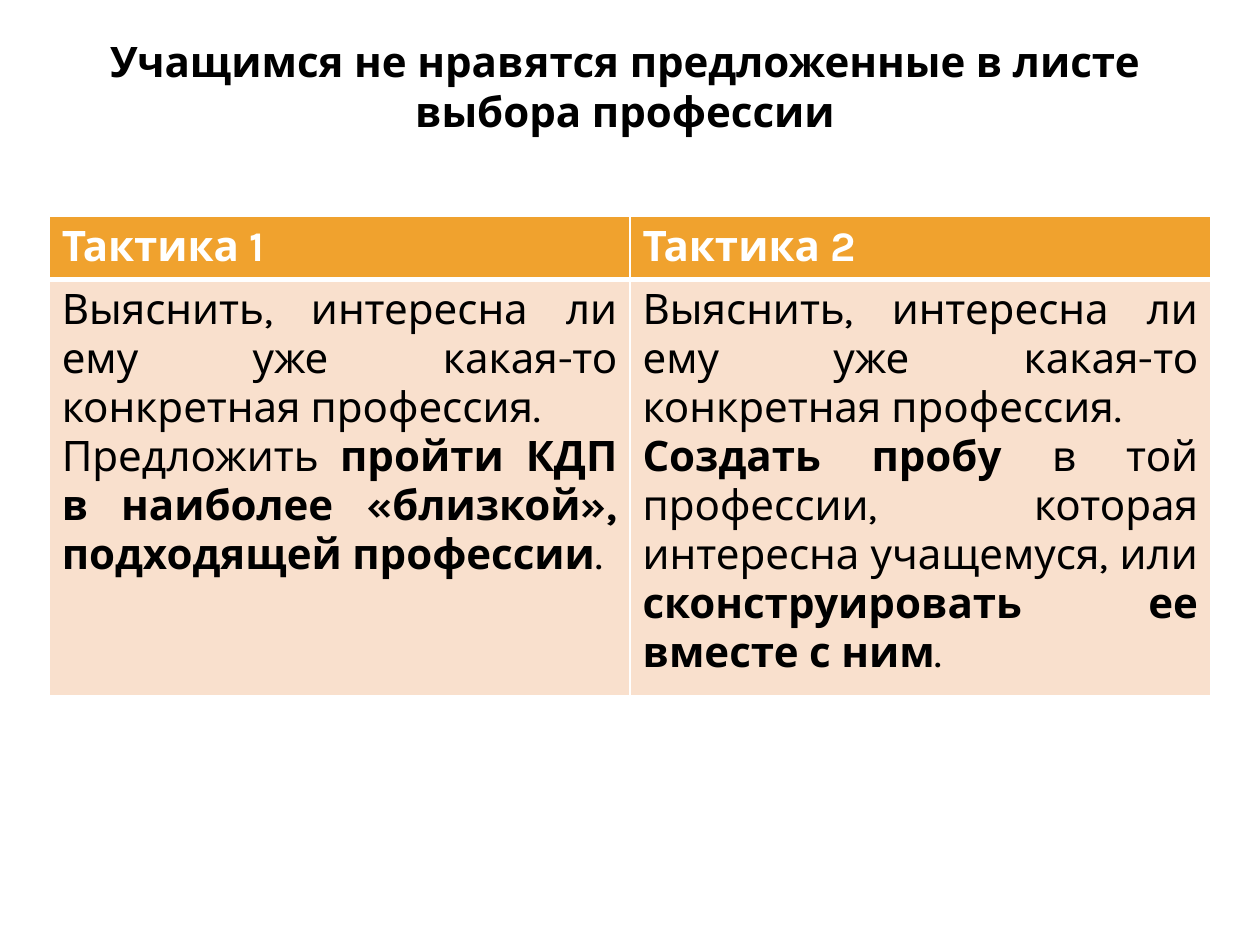
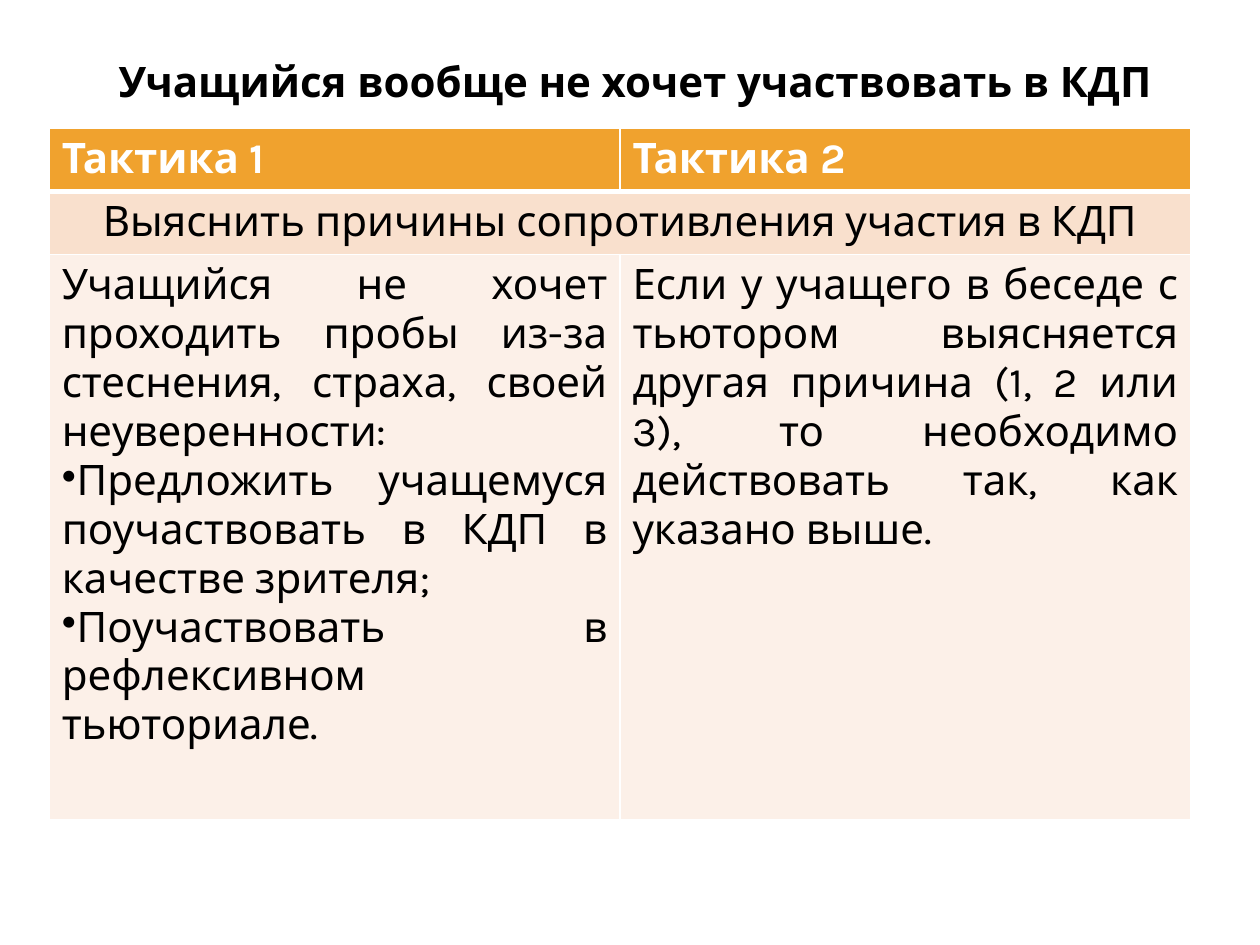
"""Build two slides that compare tutor tactics in tables."""
from dataclasses import dataclass

from lxml import etree
from pptx import Presentation
from pptx.dml.color import RGBColor
from pptx.enum import text
from pptx.oxml import ns
from pptx.util import Inches, Pt

ALIGN = text.PP_ALIGN
TITLE_ONLY = 5


@dataclass(frozen=True)
class Theme:
    font: str = "Karla"
    size: int = 24
    ink: str = "000000"
    white: str = "FFFFFF"
    header: str = "F0A22E"
    bands: tuple = ("F9E0CD", "FCF0E8")
    thin: int = 1
    thick: int = 3


class Deck:
    def __init__(self, theme):
        self.theme = theme
        self.prs = Presentation()
        self.prs.slide_width, self.prs.slide_height = Inches(10), Inches(7.5)
        self.slide = None

    def add_slide(self):
        layout = self.prs.slide_layouts[TITLE_ONLY]
        self.slide = self.prs.slides.add_slide(layout)

    def style(self, paragraph, color, bold, align):
        font = paragraph.font
        font.name, font.size = self.theme.font, Pt(self.theme.size)
        font.color.rgb = RGBColor.from_string(color)
        font.bold = bold
        paragraph.alignment = align

    def title(self, wording, left, top, width, height):
        heading = self.slide.shapes.title
        heading.left, heading.top = Inches(left), Inches(top)
        heading.width, heading.height = Inches(width), Inches(height)
        frame = heading.text_frame
        frame.text = wording
        frame.word_wrap = True
        frame.auto_size = text.MSO_AUTO_SIZE.NONE
        frame.vertical_anchor = text.MSO_ANCHOR.TOP
        self.style(frame.paragraphs[0], self.theme.ink, True, ALIGN.CENTER)

    def bullet(self, paragraph):
        props = paragraph._p.get_or_add_pPr()
        props.set("marL", "0")
        props.set("indent", "0")
        etree.SubElement(props, ns.qn("a:buChar")).set("char", "•")

    def borders(self, cell, top, bottom):
        props = cell._tc.get_or_add_tcPr()
        thin = self.theme.thin
        widths = {"L": thin, "R": thin, "T": top, "B": bottom}
        for place, (side, width) in enumerate(widths.items()):
            line = etree.Element(ns.qn(f"a:ln{side}"), w=str(Pt(width)))
            fill = etree.SubElement(line, ns.qn("a:solidFill"))
            etree.SubElement(fill, ns.qn("a:srgbClr"), val=self.theme.white)
            props.insert(place, line)

    def cell(self, cell, lines, fill, color, bold, align):
        """Fill a cell; ** toggles bold and a leading • makes a bullet."""
        cell.fill.solid()
        cell.fill.fore_color.rgb = RGBColor.from_string(fill)
        frame = cell.text_frame
        for number, line in enumerate(lines):
            paragraph = frame.add_paragraph() if number else frame.paragraphs[0]
            self.style(paragraph, color, bold, align)
            if line.startswith("•"):
                self.bullet(paragraph)
            for part, words in enumerate(line.lstrip("•").split("**")):
                if words:
                    run = paragraph.add_run()
                    run.text = words
                    if part % 2:
                        run.font.bold = True

    def tactics(self, left, top, width, heights, rows):
        """Draw a two-column table; a row with one entry spans both columns."""
        theme = self.theme
        table = self.slide.shapes.add_table(
            len(heights), 2, Inches(left), Inches(top),
            Inches(width), Inches(sum(heights))).table
        headings = [["Тактика 1"], ["Тактика 2"]]
        for number, (height, entries) in enumerate(zip(heights, [headings] + rows)):
            table.rows[number].height = Inches(height)
            spans = len(entries) == 1
            if spans:
                table.cell(number, 0).merge(table.cell(number, 1))
            for column, lines in enumerate(entries):
                cell = table.cell(number, column)
                if number == 0:
                    self.cell(cell, lines, theme.header, theme.white, True, ALIGN.LEFT)
                else:
                    self.cell(cell, lines, theme.bands[number - 1], theme.ink, False,
                              ALIGN.CENTER if spans else ALIGN.JUSTIFY)
            for column in range(2):
                self.borders(table.cell(number, column),
                             theme.thick if number == 1 else theme.thin,
                             theme.thick if number == 0 else theme.thin)


def main():
    deck = Deck(Theme())

    deck.add_slide()
    deck.title("Учащимся не нравятся предложенные в листе выбора профессии",
               0.39, 0.23, 9.14, 1.31)
    interest = "Выяснить, интересна ли ему уже какая-то конкретная профессия."
    deck.tactics(0.39, 1.72, 9.22, [0.5, 3.3], [[
        [interest,
         "Предложить **пройти КДП в наиболее «близкой», подходящей профессии**."],
        [interest,
         "**Создать пробу **в той профессии, которая интересна учащемуся, или "
         "**сконструировать ее вместе с ним**."],
    ]])

    deck.add_slide()
    deck.title("Учащийся вообще не хочет участвовать в КДП", 0.55, 0.39, 8.98, 0.91)
    deck.tactics(0.39, 1.02, 9.06, [0.5, 0.5, 4.49], [
        [["Выяснить причины сопротивления участия в КДП"]],
        [["Учащийся не хочет проходить пробы из-за стеснения, страха, "
          "своей неуверенности:",
          "•Предложить учащемуся поучаствовать в КДП в качестве зрителя;",
          "•Поучаствовать в рефлексивном тьюториале."],
         ["Если у учащего в беседе с тьютором выясняется другая причина "
          "(1, 2 или 3), то необходимо действовать так, как указано выше."]],
    ])

    deck.prs.save("out.pptx")


if __name__ == "__main__":
    main()
